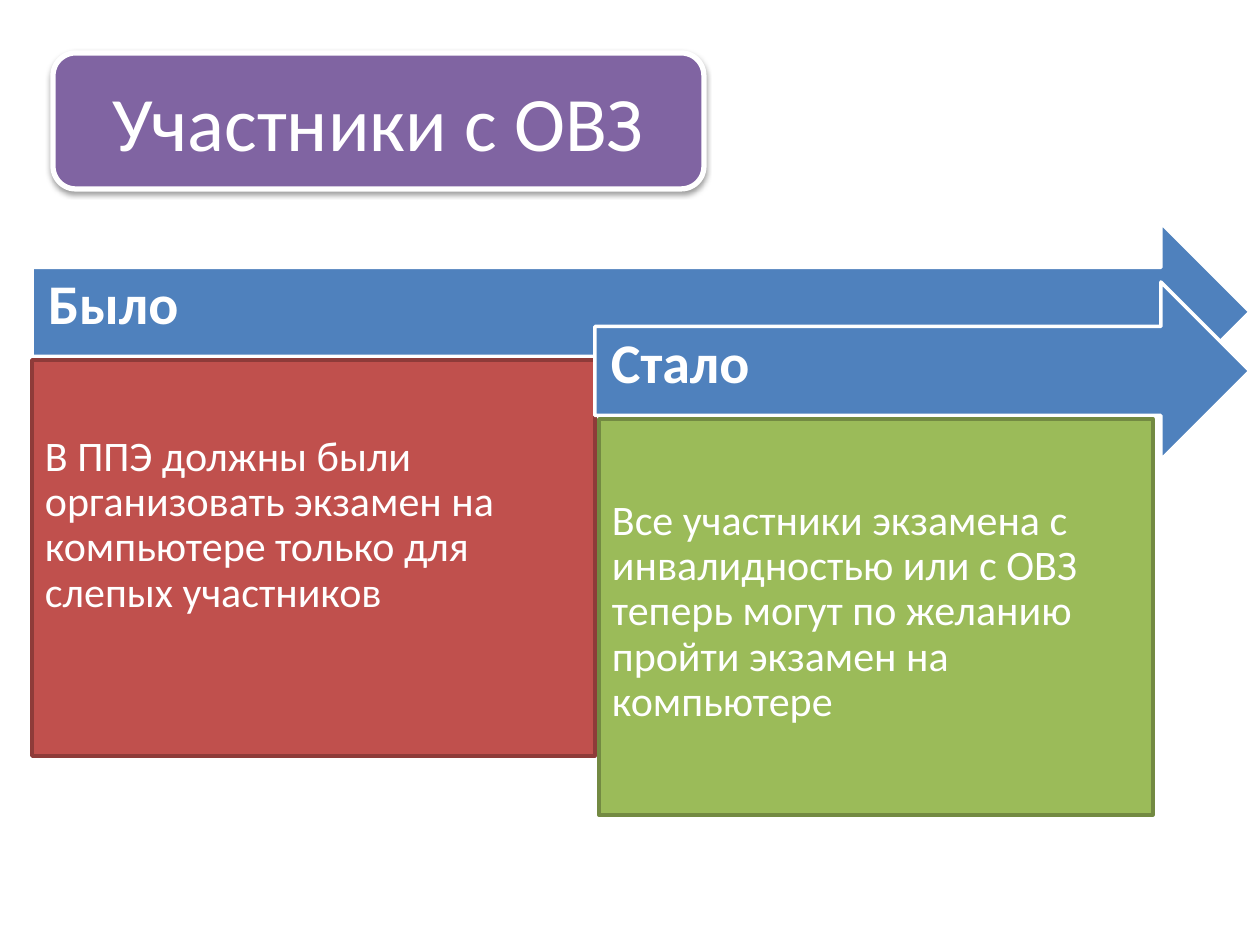
from dataclasses import dataclass

from lxml.etree import SubElement
from pptx import Presentation
from pptx.dml.color import RGBColor
from pptx.enum.shapes import MSO_SHAPE
from pptx.enum.text import MSO_ANCHOR, PP_ALIGN
from pptx.oxml.ns import qn
from pptx.util import Pt

EMU_PER_PX = 914400 // 126


@dataclass(frozen=True)
class Theme:
    font: str = "Calibri"
    white: str = "FFFFFF"
    black: str = "000000"
    arrow: str = "4F81BD"
    title: str = "8064A2"
    title_size: int = 44
    heading_size: int = 32
    body_size: int = 24


THEME = Theme()
SLIDE_SIZE = (1260, 945)
TITLE = "Участники с ОВЗ"
TITLE_AREA = (53, 53, 651, 136)
ARROWS_RIGHT = 1250
ARROW_HEIGHT = 178
PANEL_DROP = 137
PANEL_HEIGHT = 396

STAGES = [
    {
        "heading": "Было",
        "body": "В ППЭ должны были организовать экзамен на компьютере только для слепых участников",
        "arrow_at": (32, 223),
        "panel_left": 32,
        "panel_width": 563,
        "text_top": 75,
        "fill": "C0504D",
        "line": "8E3B39",
    },
    {
        "heading": "Стало",
        "body": "Все участники экзамена с инвалидностью или с ОВЗ теперь могут по желанию пройти экзамен на компьютере",
        "arrow_at": (595, 282),
        "panel_left": 599,
        "panel_width": 554,
        "text_top": 80,
        "fill": "9BBB59",
        "line": "738A42",
    },
]


def px(value):
    return value * EMU_PER_PX


def add_box(slide, kind, area, fill, line, line_width=2):
    box = slide.shapes.add_shape(kind, *map(px, area))
    box.shadow.inherit = False
    box.fill.solid()
    box.fill.fore_color.rgb = RGBColor.from_string(fill)
    box.line.color.rgb = RGBColor.from_string(line)
    box.line.width = Pt(line_width)
    return box


def write(box, text, size, insets, anchor, align=PP_ALIGN.LEFT, bold=False, spacing=0.9):
    frame = box.text_frame
    frame.word_wrap = True
    frame.vertical_anchor = anchor
    frame.margin_left, frame.margin_top, frame.margin_right, frame.margin_bottom = map(px, insets)
    para = frame.paragraphs[0]
    para.alignment = align
    para.line_spacing = spacing
    span = para.add_run()
    span.text = text
    span.font.name = THEME.font
    span.font.size = Pt(size)
    span.font.bold = bold
    span.font.color.rgb = RGBColor.from_string(THEME.white)


def add_shadow(box):
    effects = box._element.spPr.find(qn("a:effectLst"))
    shadow = SubElement(effects, qn("a:outerShdw"), blurRad=str(Pt(3.1)),
                        dist=str(Pt(1.6)), dir="5400000", rotWithShape="0")
    color = SubElement(shadow, qn("a:srgbClr"), val=THEME.black)
    SubElement(color, qn("a:alpha"), val="38000")


def add_stage(slide, stage):
    left, top = stage["arrow_at"]
    arrow = add_box(slide, MSO_SHAPE.RIGHT_ARROW,
                    (left, top, ARROWS_RIGHT - left, ARROW_HEIGHT), THEME.arrow, THEME.white)
    write(arrow, stage["heading"], THEME.heading_size, (16, 0, 35, 11),
          MSO_ANCHOR.MIDDLE, bold=True)
    panel = add_box(slide, MSO_SHAPE.RECTANGLE,
                    (stage["panel_left"], top + PANEL_DROP, stage["panel_width"], PANEL_HEIGHT),
                    stage["fill"], stage["line"])
    write(panel, stage["body"], THEME.body_size, (13, stage["text_top"], 13, 13), MSO_ANCHOR.TOP)


def add_title(slide):
    plate = add_box(slide, MSO_SHAPE.ROUNDED_RECTANGLE, TITLE_AREA, THEME.title, THEME.white, 3)
    add_shadow(plate)
    title = slide.shapes.title
    title.left, title.top, title.width, title.height = map(px, TITLE_AREA)
    write(title, TITLE, THEME.title_size, (13, 6, 13, 6), MSO_ANCHOR.MIDDLE,
          PP_ALIGN.CENTER, spacing=1.0)
    plate._element.addnext(title._element)


def main():
    deck = Presentation()
    deck.slide_width, deck.slide_height = map(px, SLIDE_SIZE)
    page = deck.slides.add_slide(deck.slide_layouts[5])
    for stage in STAGES:
        add_stage(page, stage)
    add_title(page)
    deck.save("out.pptx")


if __name__ == "__main__":
    main()
